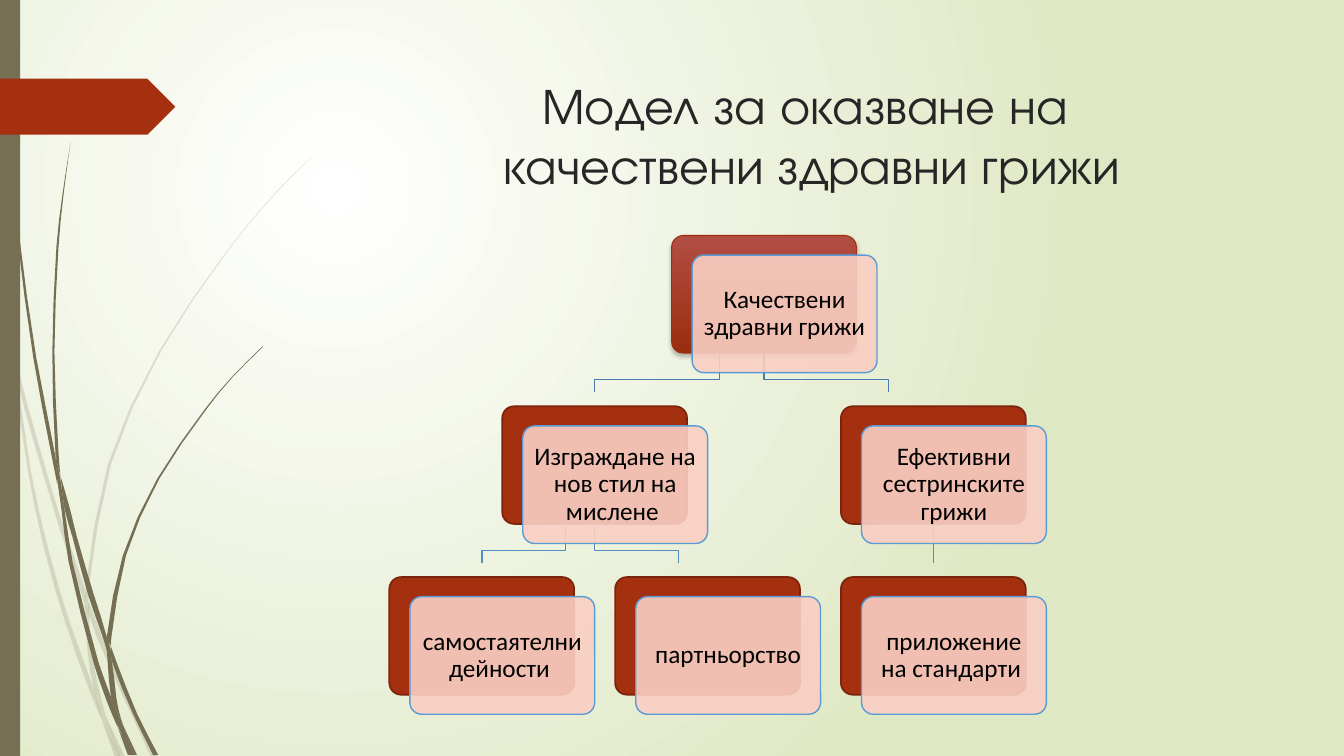
from typing import NamedTuple

from lxml import etree
from pptx import Presentation
from pptx.dml.color import RGBColor
from pptx.enum.shapes import MSO_CONNECTOR, MSO_SHAPE
from pptx.enum.text import MSO_ANCHOR, MSO_AUTO_SIZE, PP_ALIGN
from pptx.oxml.ns import qn
from pptx.util import Pt

RECTANGLE, ROUNDED, ARROW_TAG = MSO_SHAPE.RECTANGLE, MSO_SHAPE.ROUNDED_RECTANGLE, MSO_SHAPE.PENTAGON
STRAIGHT = MSO_CONNECTOR.STRAIGHT
CENTER = PP_ALIGN.CENTER
TOP, MIDDLE = MSO_ANCHOR.TOP, MSO_ANCHOR.MIDDLE
NO_AUTOFIT = MSO_AUTO_SIZE.NONE

COLORS = {
    "white": "FFFFFF", "pale green": "DFE8C4", "olive": "766F54", "rust": "A53010",
    "rust edge": "7A240C", "root edge": "9E2E0F", "root light": "B14E43", "root dark": "9A2D0F",
    "peach": "F9CFC3", "blue edge": "5B9BD5", "upper link": "497CAB", "lower link": "538DC1",
    "title": "262626", "black": "000000",
}
SLIDE_WIDTH, SLIDE_HEIGHT = 960, 540
BOX_WIDTH, BOX_HEIGHT = 132, 84
FIRST_LEFT, COLUMN_STEP = 278.1, 161.3
FIRST_TOP, ROW_STEP = 168.2, 122
LABEL_SHIFT_X, LABEL_SHIFT_Y = 14.7, 14
LINK_TURN, LINK_DROP = 19, 28


class Station(NamedTuple):
    """The left and right edge of a grass blade at one height."""
    y: float
    left: float
    right: float


class Node(NamedTuple):
    text: str
    column: float
    row: int


class Link(NamedTuple):
    row: int
    stem_x: float
    drop_x: float
    color: str


PALE_BLADES = [
    [(203, 0, 0), (215.3, 0, 3), (231.8, 3.6, 6.5), (252, 7.9, 7.9)],
    [(248.4, 10.1, 10.1), (270.7, 12.2, 14.8), (311.8, 23, 26), (374.4, 41.6, 44.6), (422, 57.4, 61.2),
     (431.3, 60.5, 60.5)],
    [(429.1, 63.4, 63.4), (439.2, 63.4, 67), (469, 75.2, 78.5), (499, 88.6, 91.4), (540.7, 108, 111.6)],
    [(511.9, 75.6, 75.6), (540.7, 85.7, 89.3)],
    [(252, 7.9, 7.9), (270.7, 10.3, 12.2), (337.7, 20.2, 22.3), (392.4, 31.6, 34.5), (446.4, 47.2, 50.4),
     (491.8, 63.4, 67), (514.1, 72.7, 72.7)],
    [(431.3, 60.5, 60.5), (439.2, 60.7, 63.4), (465.1, 62.6, 65.5), (491.8, 67, 70.5), (511.9, 75.6, 75.6)],
    [(110.2, 224.6, 224.6), (126, 208.1, 208.8), (141.8, 193, 193.7), (176.4, 164.2, 164.9),
     (250.6, 113.8, 115.2), (331.9, 77, 79.2), (420.5, 61.2, 63.4), (429.1, 63.4, 63.4)],
    [(514.1, 72.7, 72.7), (540.7, 82.1, 85.7)],
    [(421.9, 61.2, 61.2), (431.3, 60.5, 63.4), (439.2, 63.4, 63.4)],
    [(491.8, 67, 67), (498.2, 68.5, 69.1), (513, 72.4, 76), (540.7, 85.5, 85.9)],
]
DARK_BLADES = [
    [(0, 2.2, 2.9), (34.6, 2.9, 3.6), (79.2, 5, 5.8), (167.8, 12.2, 13.7), (255.6, 23.8, 25.9),
     (326.2, 37, 39.6), (346.3, 41, 41)],
    [(339.8, 43.2, 43.2), (363.6, 46.1, 50), (383.8, 51.8, 55), (424.8, 62.9, 67), (455, 73.4, 76.3),
     (464.4, 76.3, 76.3)],
    [(461.5, 79.2, 79.2), (472.3, 79.9, 83), (509.8, 95, 97.9), (539.3, 109.4, 113)],
    [(343.4, 41, 41), (363.6, 43.9, 46.1), (401, 49, 51.8), (473.8, 67, 70.6), (497.5, 75.1, 79.2),
     (509.8, 79.9, 82.5), (519.8, 84.2, 84.2)],
    [(101.5, 50.4, 50.4), (139, 44.6, 45.4), (176.4, 40.3, 41.8), (251.3, 37.4, 38.9),
     (323.3, 39.6, 41.8), (339.8, 43.2, 43.2)],
    [(517.7, 87.8, 87.8), (539.3, 95.8, 97.9)],
    [(323.3, 39.6, 39.6), (343.4, 41, 43.3), (363.6, 46.1, 46.1)],
    [(247.7, 187.2, 187.9), (269.3, 165.6, 166.3), (291.6, 146.9, 148), (342, 112.3, 113.8),
     (396.7, 87.8, 90), (455, 76.3, 79.6), (461.5, 79.2, 79.2)],
    [(519.8, 84.2, 84.2), (539.3, 91.4, 94.3)],
    [(464.4, 76.3, 76.3), (472.3, 76.9, 79.9), (497.5, 79.2, 83), (508.3, 83.5, 85), (517.7, 87.8, 87.8)],
    [(454.3, 76.3, 76.3), (464.4, 76.3, 79.2), (472.3, 79.9, 79.9)],
    [(497.5, 79.2, 79.2), (508.3, 81.7, 83.5), (517.7, 83.9, 87.8), (539.3, 93.6, 95.8)],
]
LINKS = [
    Link(1, 666.7, 666.7, "lower link"), Link(0, 545.7, 634.7, "upper link"),
    Link(1, 424.8, 484.5, "lower link"), Link(1, 403.9, 344.2, "lower link"),
    Link(0, 514.1, 424.8, "upper link"),
]
NODES = [
    Node("Качествени здравни грижи", 1.25, 0),
    Node("Изграждане на нов стил на мислене ", 0.5, 1),
    Node("самостаятелни дейности ", 0, 2),
    Node("партньорство", 1, 2),
    Node("Ефективни сестринските грижи", 2, 1),
    Node("приложение на стандарти ", 2, 2),
]


def rgb(name: str) -> RGBColor:
    return RGBColor.from_string(COLORS[name])


def set_gradient(fill, start: str, end: str) -> None:
    fill.gradient()
    for stop, name, position in zip(fill.gradient_stops, (start, end), (0, 1)):
        stop.color.rgb = rgb(name)
        stop.position = position


def style(shape, fill: str, *, edge: str = "", edge_width: float = 1, opacity: int = 100) -> None:
    shape.shadow.inherit = False
    shape.fill.solid()
    shape.fill.fore_color.rgb = rgb(fill)
    if opacity < 100:
        color = shape._element.spPr.find(qn("a:solidFill")).find(qn("a:srgbClr"))
        etree.SubElement(color, qn("a:alpha"), val=str(opacity * 1000))
    if edge:
        shape.line.color.rgb = rgb(edge)
        shape.line.width = Pt(edge_width)
    else:
        shape.line.fill.background()


def write(frame, text: str, *, font: str, size: float, color: str, anchor, inset: float | None = None,
          spacing: float | None = None) -> None:
    frame.word_wrap = True
    frame.auto_size = NO_AUTOFIT
    frame.vertical_anchor = anchor
    if inset is not None:
        frame.margin_left = frame.margin_right = frame.margin_top = frame.margin_bottom = Pt(inset)
    para = frame.paragraphs[0]
    para.text = text
    para.alignment = CENTER
    para.line_spacing = spacing
    for span in para.runs:
        span.font.name, span.font.size = font, Pt(size)
        span.font.color.rgb = rgb(color)


def add_box(page, kind, left: float, top: float, width: float, height: float):
    return page.shapes.add_shape(kind, Pt(left), Pt(top), Pt(width), Pt(height))


def add_outline(page, points: list[tuple[float, float]], *, close: bool):
    corners = [(Pt(x), Pt(y)) for x, y in points]
    builder = page.shapes.build_freeform(*corners[0], scale=1.0)
    builder.add_line_segments(corners[1:], close=close)
    return builder.convert_to_shape()


def smooth_edge(points: list[tuple[float, float]]) -> list[tuple[float, float]]:
    """Add the midpoint of a cubic curve, as x over y, between points of rising y."""
    last = len(points) - 1
    slopes = []
    for index in range(last + 1):
        (x0, y0), (x1, y1) = points[max(index - 1, 0)], points[min(index + 1, last)]
        slopes.append((x1 - x0) / (y1 - y0))
    curve = [points[0]]
    for index in range(last):
        (x0, y0), (x1, y1) = points[index:index + 2]
        bulge = (y1 - y0) * (slopes[index] - slopes[index + 1]) / 8
        curve += [((x0 + x1) / 2 + bulge, (y0 + y1) / 2), (x1, y1)]
    return curve


def add_blade(page, blade: list[tuple[float, float, float]], opacity: int) -> None:
    stations = [Station(*values) for values in blade]
    left = smooth_edge([(station.left, station.y) for station in stations])
    right = smooth_edge([(station.right, station.y) for station in stations])
    style(add_outline(page, left + right[::-1], close=True), "olive", opacity=opacity)


def add_link(page, link: Link) -> None:
    top = FIRST_TOP + link.row * ROW_STEP + BOX_HEIGHT
    turn, bottom = top + LINK_TURN, top + LINK_DROP
    if link.stem_x == link.drop_x:
        line = page.shapes.add_connector(STRAIGHT, Pt(link.stem_x), Pt(top), Pt(link.drop_x), Pt(bottom))
        etree.SubElement(line._element.spPr, qn("a:effectLst"))
    else:
        line = add_outline(page, [(link.stem_x, top), (link.stem_x, turn), (link.drop_x, turn),
                                  (link.drop_x, bottom)], close=False)
        line.shadow.inherit = False
        line.fill.background()
    line.line.color.rgb = rgb(link.color)
    line.line.width = Pt(1)


def add_node(page, node: Node) -> None:
    left, top = FIRST_LEFT + node.column * COLUMN_STEP, FIRST_TOP + node.row * ROW_STEP
    back = add_box(page, ROUNDED, left, top, BOX_WIDTH, BOX_HEIGHT)
    label = add_box(page, ROUNDED, left + LABEL_SHIFT_X, top + LABEL_SHIFT_Y, BOX_WIDTH, BOX_HEIGHT)
    back.adjustments[0] = label.adjustments[0] = 0.1
    if node.row == 0:
        style(back, "rust", edge="root edge", edge_width=0.75)
        set_gradient(back.fill, "root light", "root dark")
        back.fill.gradient_angle = 270
        effects = back._element.spPr.find(qn("a:effectLst"))
        shadow = etree.SubElement(effects, qn("a:outerShdw"), blurRad=str(Pt(3)), dist=str(Pt(2)),
                                  dir="5400000", rotWithShape="0")
        color = etree.SubElement(shadow, qn("a:srgbClr"), val=COLORS["black"])
        etree.SubElement(color, qn("a:alpha"), val="25000")
    else:
        style(back, "rust", edge="rust edge", edge_width=1.25)
    style(label, "peach", edge="blue edge", opacity=90)
    write(label.text_frame, node.text, font="Calibri", size=18, color="black", anchor=MIDDLE,
          inset=5, spacing=0.9)


def paint_background(page) -> None:
    set_gradient(page.background.fill, "white", "pale green")
    gradient = page.element.find(".//" + qn("a:gradFill"))
    gradient.remove(gradient.find(qn("a:lin")))
    circle = etree.SubElement(gradient, qn("a:path"), path="circle")
    etree.SubElement(circle, qn("a:fillToRect"), l="50000", t="50000", r="100000", b="100000")


def main() -> None:
    deck = Presentation()
    deck.slide_width, deck.slide_height = Pt(SLIDE_WIDTH), Pt(SLIDE_HEIGHT)
    page = deck.slides.add_slide(deck.slide_layouts[5])
    paint_background(page)
    for blades, opacity in ((PALE_BLADES, 20), (DARK_BLADES, 100)):
        for blade in blades:
            add_blade(page, blade, opacity)
    style(add_box(page, RECTANGLE, 0, 0, 14.4, SLIDE_HEIGHT), "olive")
    style(add_box(page, ARROW_TAG, 0, 56.2, 125.3, 40), "rust")
    title = page.shapes.title
    title.left, title.top, title.width, title.height = Pt(213.8), Pt(49), Pt(733), Pt(100.8)
    write(title.text_frame, "Модел за оказване на \vкачествени здравни грижи", font="TeX Gyre Adventor",
          size=36, color="title", anchor=TOP)
    for link in LINKS:
        add_link(page, link)
    for node in NODES:
        add_node(page, node)
    deck.save("out.pptx")


if __name__ == "__main__":
    main()
